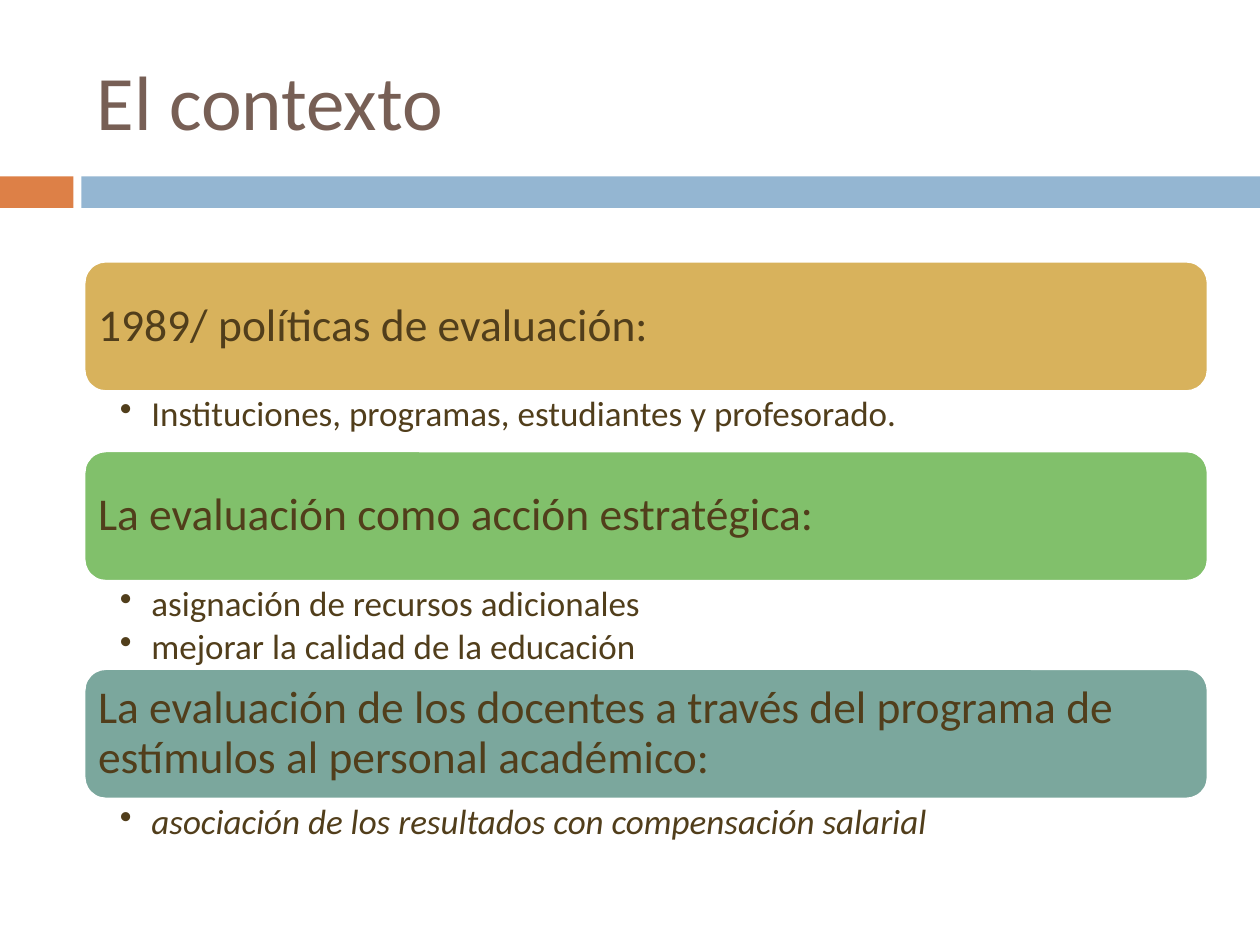
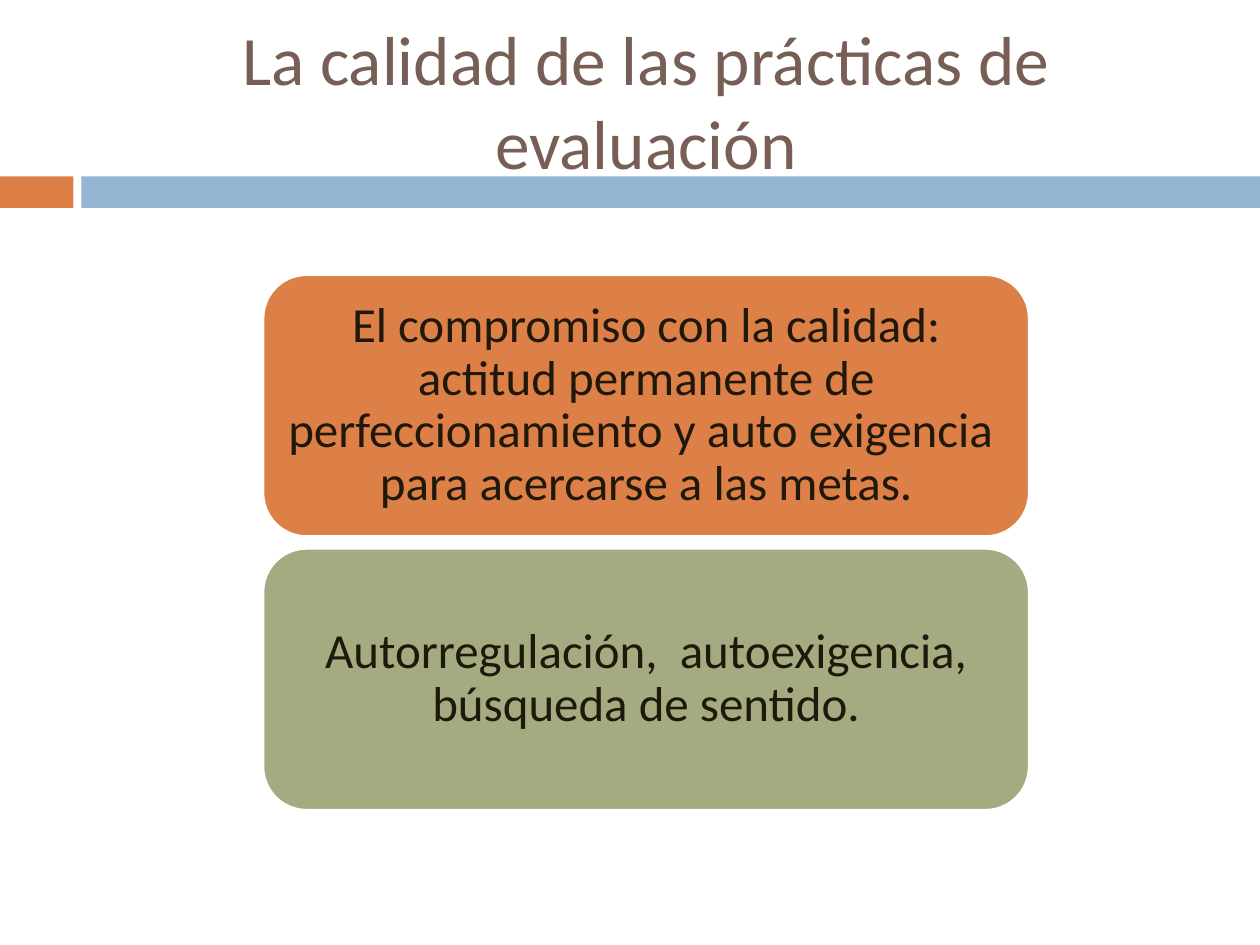
from lxml import etree
from pptx import Presentation
from pptx.dml.color import RGBColor
from pptx.enum.shapes import MSO_SHAPE
from pptx.enum.text import MSO_ANCHOR, MSO_AUTO_SIZE, PP_ALIGN
from pptx.oxml.ns import qn
from pptx.util import Pt

RECT, ROUND = MSO_SHAPE.RECTANGLE, MSO_SHAPE.ROUNDED_RECTANGLE
LEFT, CENTER = PP_ALIGN.LEFT, PP_ALIGN.CENTER
TOP, MIDDLE = MSO_ANCHOR.TOP, MSO_ANCHOR.MIDDLE

FONT = "Calibri"
WHITE = RGBColor(0xFF, 0xFF, 0xFF)
ORANGE = RGBColor(0xDD, 0x80, 0x47)
BLUE = RGBColor(0x94, 0xB6, 0xD2)
GOLD = RGBColor(0xD8, 0xB2, 0x5C)
GREEN = RGBColor(0x81, 0xC0, 0x6B)
TEAL = RGBColor(0x7B, 0xA7, 0x9D)
OLIVE = RGBColor(0xA5, 0xAB, 0x81)
TITLE = RGBColor(0x77, 0x5F, 0x55)
BROWN = RGBColor(0x51, 0x3E, 0x1B)
DARK = RGBColor(0x20, 0x19, 0x0B)

WIDTH, HEIGHT = 720, 540
EDGE, SPAN = 48.1, 642.2  # left edge and width of the content column

POLICIES = [
    (GOLD, "1989/ políticas de evaluación:",
     ["Instituciones, programas, estudiantes y profesorado."], False),
    (GREEN, "La evaluación como acción estratégica:",
     ["asignación de recursos adicionales",
      "mejorar la calidad de la educación"], False),
    (TEAL, "La evaluación de los docentes a través del programa de "
           "estímulos al personal académico:",
     ["asociación de los resultados con compensación salarial"], True),
]
VALUES = [
    (ORANGE, "El compromiso con la calidad: actitud permanente de "
             "perfeccionamiento y auto exigencia  para acercarse a las metas."),
    (OLIVE, "Autorregulación,  autoexigencia, búsqueda de sentido."),
]


def points(*sizes):
    return [Pt(size) for size in sizes]


def set_frame(frame, insets, anchor):
    """Wrap the text; insets run left, top, right, bottom."""
    frame.word_wrap = True
    frame.auto_size = MSO_AUTO_SIZE.NONE
    frame.vertical_anchor = anchor
    (frame.margin_left, frame.margin_top,
     frame.margin_right, frame.margin_bottom) = points(*insets)


def add_run(para, text, size, color, italic=False):
    run = para.add_run()
    run.text = text
    font = run.font
    font.name, font.size, font.italic = FONT, Pt(size), italic
    font.color.rgb = color


def add_block(slide, kind, box, fill):
    shape = slide.shapes.add_shape(kind, *points(*box))
    shape.shadow.inherit = False
    shape.fill.solid()
    shape.fill.fore_color.rgb = fill
    shape.line.fill.background()
    return shape


def add_card(slide, box, fill, text, size, color, align, inset):
    card = add_block(slide, ROUND, box, fill)
    card.line.color.rgb = WHITE
    card.line.width = Pt(1.5)
    set_frame(card.text_frame, (inset, inset, inset, inset), MIDDLE)
    para = card.text_frame.paragraphs[0]
    para.alignment = align
    para.line_spacing = 0.9
    add_run(para, text, size, color)


def set_bullet(para):
    props = para._p.get_or_add_pPr()
    props.set("marL", str(Pt(18)))
    props.set("indent", str(-Pt(18)))
    etree.SubElement(props, qn("a:buChar")).set("char", "•")


def add_list(slide, box, items, italic):
    frame = slide.shapes.add_textbox(*points(*box)).text_frame
    set_frame(frame, (20.4, 2.9, 14.4, 2.9), TOP)
    for index, item in enumerate(items):
        para = frame.add_paragraph() if index else frame.paragraphs[0]
        para.line_spacing = 0.9
        para.space_after = Pt(3)
        set_bullet(para)
        add_run(para, item, 20, BROWN, italic)


def add_slide(deck, text, size, align):
    """Start a slide with its title and the two-part band."""
    slide = deck.slides.add_slide(deck.slide_layouts.get_by_name("Title Only"))
    title = slide.shapes.title
    title.left, title.top, title.width, title.height = points(EDGE, 18, SPAN, 78)
    set_frame(title.text_frame, (7.2, 3.6, 7.2, 3.6), MIDDLE)
    para = title.text_frame.paragraphs[0]
    para.alignment = align
    add_run(para, text, size, TITLE)
    add_block(slide, RECT, (0, 100.8, 42, 18), ORANGE)
    add_block(slide, RECT, (46.5, 100.8, WIDTH - 46.5, 18), BLUE)
    return slide


def add_context(deck):
    slide = add_slide(deck, "El contexto", 44, LEFT)
    top, high = 149.3, 74.4
    for fill, head, items, italic in POLICIES:
        add_card(slide, (EDGE, top, SPAN, high), fill, head, 26, BROWN, LEFT, 4.3)
        top += high
        depth = 18 + 16 * len(items)
        add_list(slide, (EDGE, top, SPAN, depth), items, italic)
        top += depth


def add_quality(deck):
    slide = add_slide(deck, "La calidad de las prácticas de evaluación",
                      39.6, CENTER)
    wide, high, gap = 437.8, 149.6, 6.8
    left = EDGE + (SPAN - wide) / 2
    for index, (fill, text) in enumerate(VALUES):
        top = 157 + index * (high + gap)
        add_card(slide, (left, top, wide, high), fill, text, 28, DARK, CENTER, 1.3)


def main():
    deck = Presentation()
    deck.slide_width, deck.slide_height = points(WIDTH, HEIGHT)
    add_context(deck)
    add_quality(deck)
    deck.save("out.pptx")


if __name__ == "__main__":
    main()
